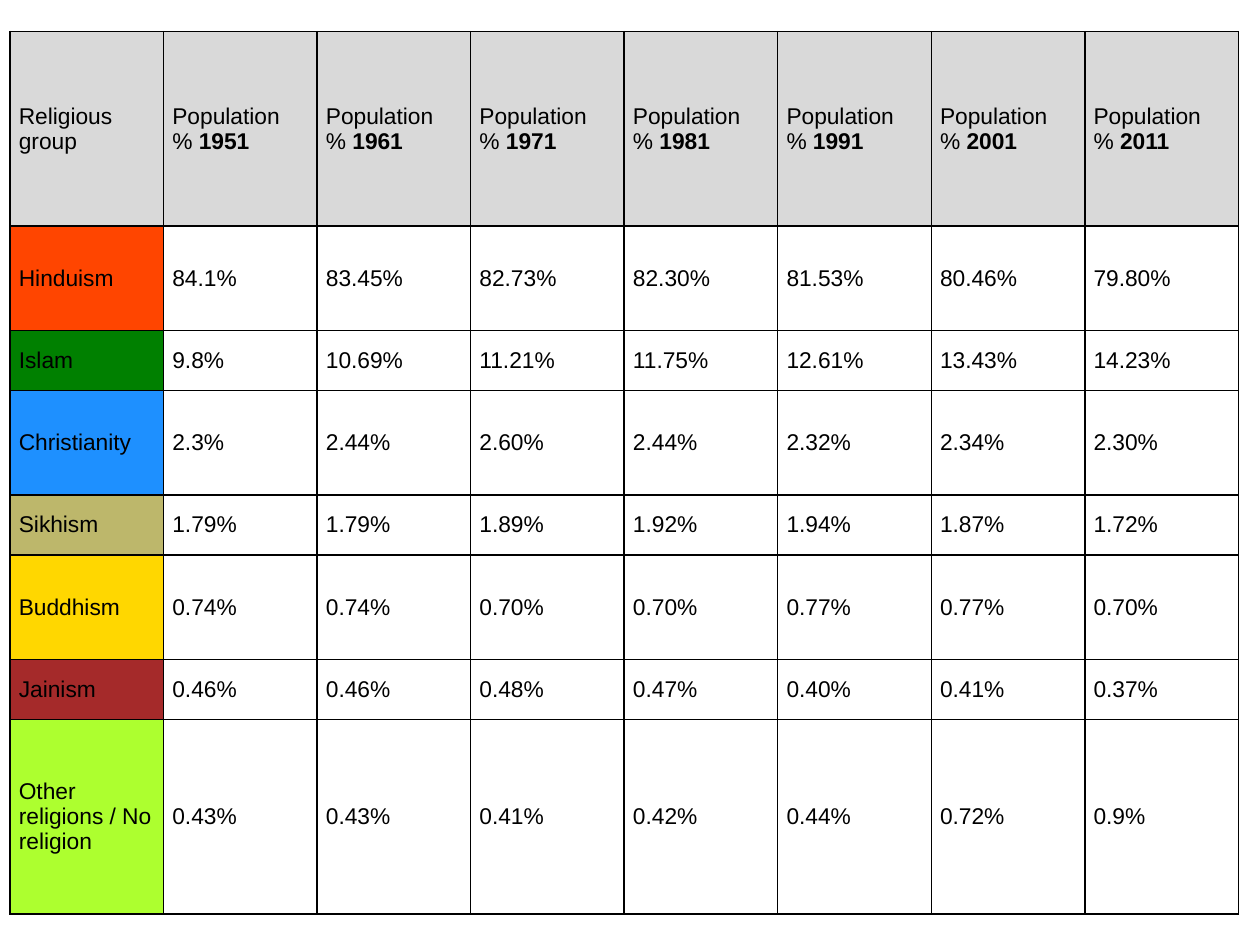
from lxml import etree
from pptx import Presentation
from pptx import util as u
from pptx.dml.color import RGBColor
from pptx.enum import text
from pptx.oxml import ns

BLACK = RGBColor(0, 0, 0)
GREY = RGBColor(0xD9, 0xD9, 0xD9)
ORANGE_RED = RGBColor(0xFF, 0x45, 0x00)
GREEN = RGBColor(0x00, 0x80, 0x00)
BLUE = RGBColor(0x1E, 0x90, 0xFF)
KHAKI = RGBColor(0xBD, 0xB7, 0x6B)
GOLD = RGBColor(0xFF, 0xD7, 0x00)
BROWN = RGBColor(0xA5, 0x2A, 0x2A)
LIME = RGBColor(0xAD, 0xFF, 0x2F)

WIDTH, HEIGHT = u.Inches(10), u.Inches(7.5)
LEFT, TOP = u.Inches(0.08), u.Inches(0.25)
TABLE_WIDTH = u.Inches(9.75)
TALL, MEDIUM, SHORT = u.Inches(1.545), u.Inches(0.83), u.Inches(0.475)

YEARS = range(1951, 2012, 10)
GROUPS = [
    ("Hinduism", ORANGE_RED, MEDIUM, "84.1 83.45 82.73 82.30 81.53 80.46 79.80"),
    ("Islam", GREEN, SHORT, "9.8 10.69 11.21 11.75 12.61 13.43 14.23"),
    ("Christianity", BLUE, MEDIUM, "2.3 2.44 2.60 2.44 2.32 2.34 2.30"),
    ("Sikhism", KHAKI, SHORT, "1.79 1.79 1.89 1.92 1.94 1.87 1.72"),
    ("Buddhism", GOLD, MEDIUM, "0.74 0.74 0.70 0.70 0.77 0.77 0.70"),
    ("Jainism", BROWN, SHORT, "0.46 0.46 0.48 0.47 0.40 0.41 0.37"),
    ("Other religions / No religion", LIME, TALL,
     "0.43 0.43 0.41 0.42 0.44 0.72 0.9"),
]

CELL_FORMAT = {
    "vertical_anchor": text.MSO_ANCHOR.MIDDLE,
    "margin_left": u.Inches(0.07),
    "margin_right": u.Inches(0.07),
    "margin_top": u.Inches(0.04),
    "margin_bottom": u.Inches(0.04),
}
FONT_FORMAT = {"name": "Arial", "size": u.Pt(13), "bold": False}


def set_format(obj, values):
    for name, value in values.items():
        setattr(obj, name, value)


def add_borders(cell):
    tc_pr = cell._tc.get_or_add_tcPr()
    for i, side in enumerate(("lnL", "lnR", "lnT", "lnB")):
        ln = etree.Element(ns.qn(f"a:{side}"), w=str(u.Pt(1)))
        fill = etree.SubElement(ln, ns.qn("a:solidFill"))
        etree.SubElement(fill, ns.qn("a:srgbClr"), val=str(BLACK))
        tc_pr.insert(i, ln)


def add_run(p, words, bold=False):
    r = p.add_run()
    r.text = words
    set_format(r.font, FONT_FORMAT | {"bold": bold})
    r.font.color.rgb = BLACK


def fill_cell(cell, lines, color=None, bold_end=""):
    """Write the lines, then bold_end in bold; no color leaves the cell clear."""
    set_format(cell, CELL_FORMAT)
    if color is None:
        cell.fill.background()
    else:
        cell.fill.solid()
        cell.fill.fore_color.rgb = color
    add_borders(cell)
    p = cell.text_frame.paragraphs[0]
    for i, line in enumerate(lines):
        if i:
            p.add_line_break()
        add_run(p, line)
    if bold_end:
        add_run(p, bold_end, bold=True)


def add_religion_table(s):
    heights = [TALL] + [group[2] for group in GROUPS]
    table = s.shapes.add_table(len(heights), len(YEARS) + 1, LEFT, TOP,
                               TABLE_WIDTH, sum(heights)).table
    set_format(table, {"first_row": False, "horz_banding": False})
    for row, height in zip(table.rows, heights):
        row.height = height

    fill_cell(table.cell(0, 0), ["Religious", "group"], GREY)
    for col, year in enumerate(YEARS, 1):
        fill_cell(table.cell(0, col), ["Population", "% "], GREY, str(year))
    for row, (name, color, _, shares) in enumerate(GROUPS, 1):
        fill_cell(table.cell(row, 0), [name], color)
        for col, share in enumerate(shares.split(), 1):
            fill_cell(table.cell(row, col), [f"{share}%"])


def main():
    prs = Presentation()
    set_format(prs, {"slide_width": WIDTH, "slide_height": HEIGHT})
    s = prs.slides.add_slide(prs.slide_layouts[6])
    add_religion_table(s)
    prs.save("out.pptx")


if __name__ == "__main__":
    main()
